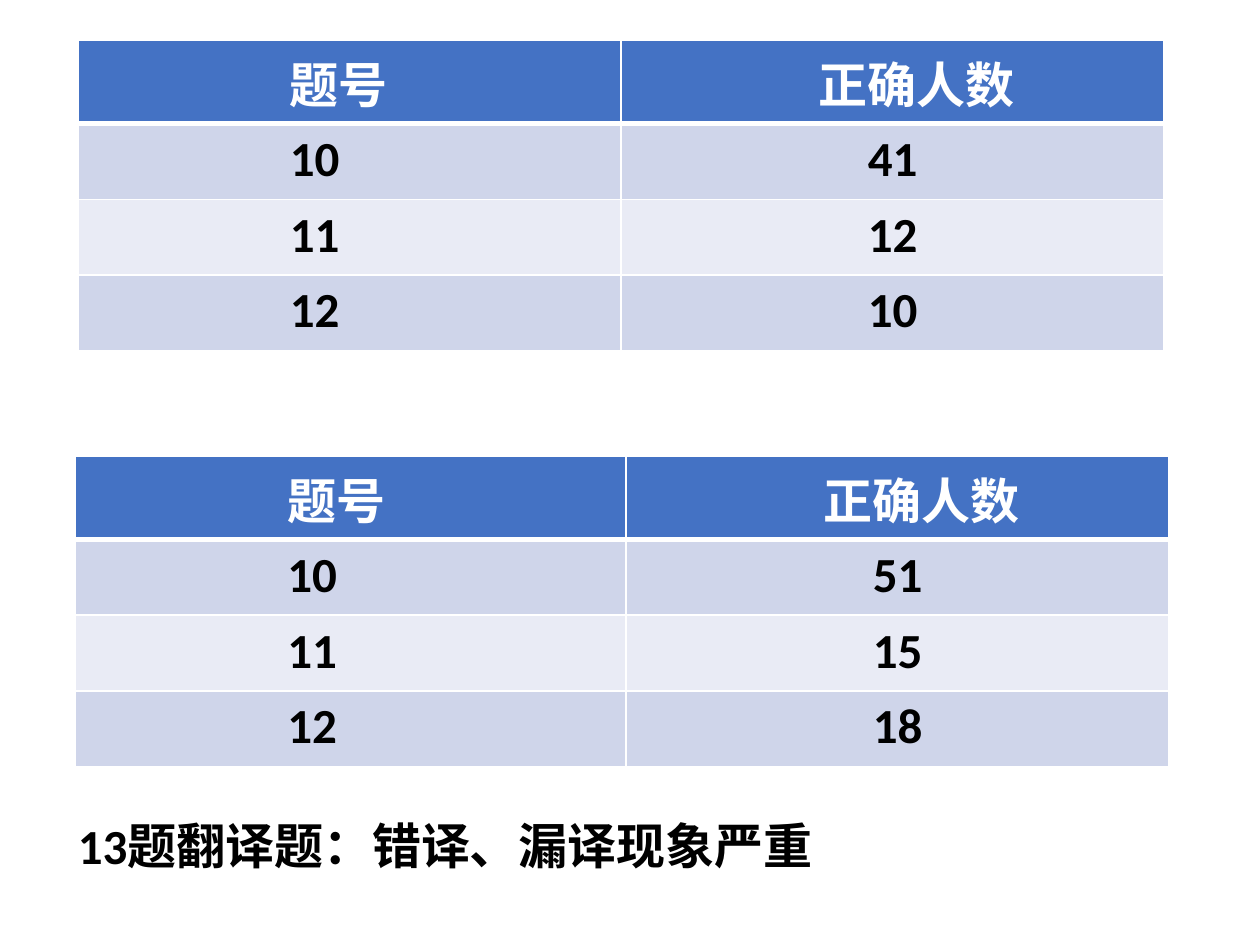
from lxml import etree
from pptx import Presentation
from pptx.dml.color import RGBColor
from pptx.enum import text
from pptx.oxml import ns
from pptx.util import Inches, Pt

WHITE, BLACK, BLUE = "FFFFFF", "000000", "4472C4"
BANDS = ["CFD5EA", "E9EBF5"]
HEADINGS = ("题号", "正确人数")
LEFT, CENTER = text.PP_ALIGN.LEFT, text.PP_ALIGN.CENTER


def write(frame, words, color=BLACK, align=LEFT):
    para = frame.paragraphs[0]
    para.alignment = align
    span = para.add_run()
    span.text = words
    span.font.name = "Calibri"
    span.font.size = Pt(28)
    span.font.bold = True
    span.font.color.rgb = RGBColor.from_string(color)


def add_borders(cell, **widths):
    """Draw white cell borders; keywords are L, R, T, B in points."""
    properties = cell._tc.get_or_add_tcPr()
    for side, width in widths.items():
        line = etree.SubElement(properties, ns.qn(f"a:ln{side}"), w=str(Pt(width)))
        fill = etree.SubElement(line, ns.qn("a:solidFill"))
        etree.SubElement(fill, ns.qn("a:srgbClr"), val=WHITE)


deck = Presentation()
deck.slide_width, deck.slide_height = Inches(10), Inches(7.5)
page = deck.slides.add_slide(deck.slide_layouts[6])

# left, top, column widths, question number and correct answers
score_tables = [
    (0.62, 0.32, (4.31, 4.31), [(10, 41), (11, 12), (12, 10)]),
    (0.6, 3.62, (4.37, 4.31), [(10, 51), (11, 15), (12, 18)]),
]
for left, top, widths, scores in score_tables:
    rows = [HEADINGS, *scores]
    table = page.shapes.add_table(
        len(rows), 2, Inches(left), Inches(top),
        Inches(sum(widths)), Inches(0.6 * len(rows))).table
    for column, width in zip(table.columns, widths):
        column.width = Inches(width)
    for r, row in enumerate(rows):
        header = r == 0
        for c, value in enumerate(row):
            cell = table.cell(r, c)
            add_borders(cell, L=1, R=1, T=3 if r == 1 else 1, B=3 if header else 1)
            cell.fill.solid()
            cell.fill.fore_color.rgb = RGBColor.from_string(
                BLUE if header else BANDS[(r - 1) % 2])
            if c == 0:
                cell.margin_left = Inches(1.68)
            elif header:
                cell.margin_left = Inches(0.48)
            write(cell.text_frame, str(value), WHITE if header else BLACK,
                  CENTER if c else LEFT)

# The caption box is a little wider than its line, so it stays on one line
box = page.shapes.add_textbox(Inches(0.52), Inches(6.42), Inches(6.4), Inches(0.57))
box.text_frame.word_wrap = True
box.text_frame.auto_size = text.MSO_AUTO_SIZE.SHAPE_TO_FIT_TEXT
write(box.text_frame, "13题翻译题：错译、漏译现象严重")

deck.save("out.pptx")
